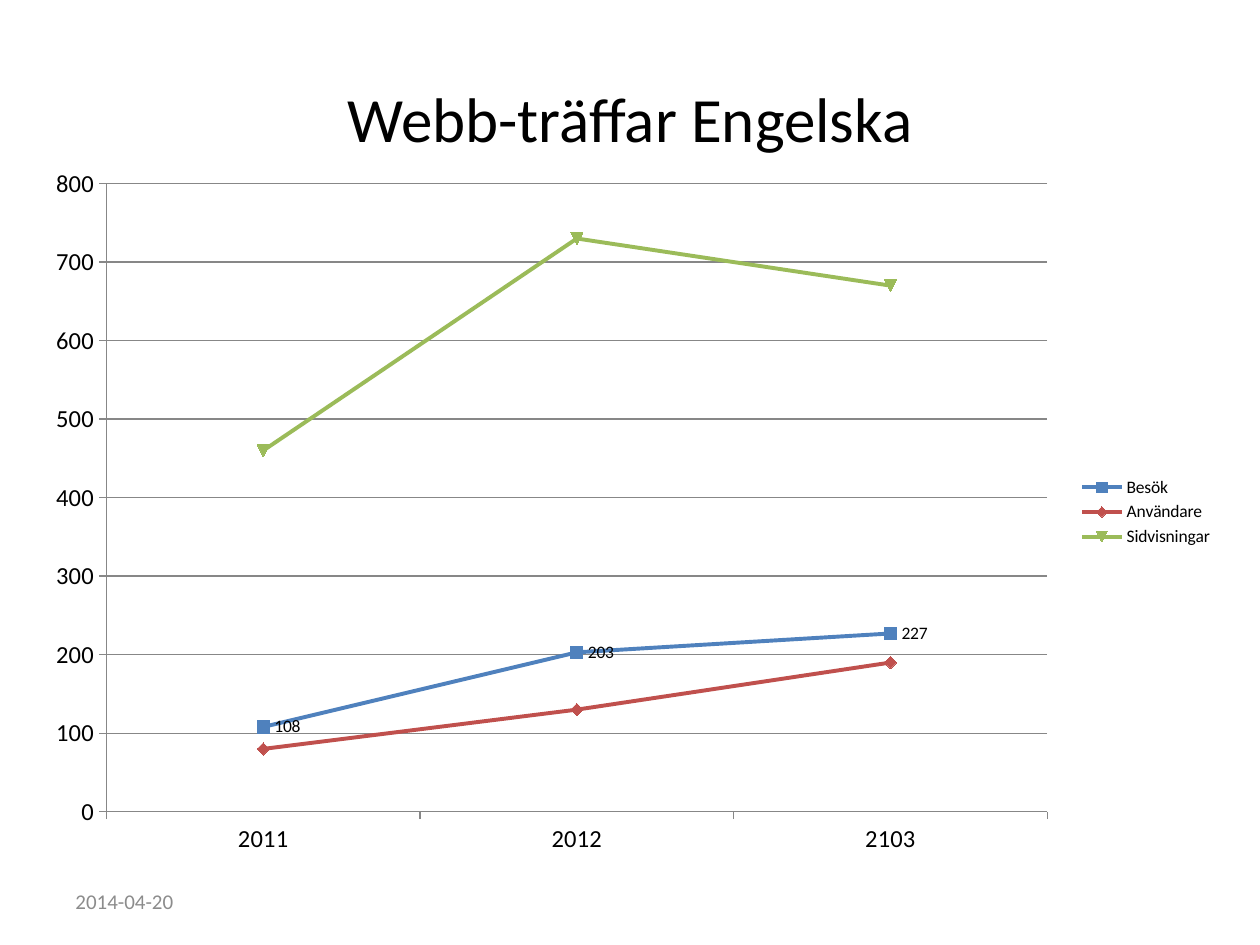
import pptx
import pptx.util
import pptx.chart.data
import pptx.dml.color
import pptx.enum.chart
import pptx.enum.text
import pptx.oxml
import pptx.oxml.ns

PX = 914400 // 126  # EMU in one px
BLACK = pptx.dml.color.RGBColor(0x00, 0x00, 0x00)
GREY = pptx.dml.color.RGBColor(0x8C, 0x8C, 0x8C)
AXIS_GREY = pptx.dml.color.RGBColor(0x87, 0x87, 0x87)
BLUE = pptx.dml.color.RGBColor(0x4F, 0x81, 0xBD)
RED = pptx.dml.color.RGBColor(0xC0, 0x50, 0x4D)
GREEN = pptx.dml.color.RGBColor(0x9B, 0xBB, 0x59)
FONT = "Calibri"

deck = pptx.Presentation()
deck.slide_width = pptx.util.Inches(10)
deck.slide_height = pptx.util.Inches(7.5)
page = deck.slides.add_slide(deck.slide_layouts[6])

# Title and date
for text, place, size, color, align in (
    ("Webb-träffar Engelska", (63, 38, 1134, 158), 36, BLACK, pptx.enum.text.PP_ALIGN.CENTER),
    ("2014-04-20", (63, 876, 294, 50), 12, GREY, pptx.enum.text.PP_ALIGN.LEFT),
):
    box = page.shapes.add_textbox(*(value * PX for value in place))
    frame = box.text_frame
    frame.word_wrap = True
    frame.vertical_anchor = pptx.enum.text.MSO_ANCHOR.MIDDLE
    frame.text = text
    para = frame.paragraphs[0]
    para.alignment = align
    span = para.runs[0]
    span.font.name = FONT
    span.font.size = pptx.util.Pt(size)
    span.font.color.rgb = color

# Line chart
series_rows = (
    ("Besök", (108, 203, 227), BLUE),
    ("Användare", (80, 130, 190), RED),
    ("Sidvisningar", (460, 730, 670), GREEN),
)
data = pptx.chart.data.CategoryChartData()
data.categories = ["2011", "2012", "2103"]
for name, values, color in series_rows:
    data.add_series(name, values)
chart = page.shapes.add_chart(
    pptx.enum.chart.XL_CHART_TYPE.LINE_MARKERS,
    35 * PX, 155 * PX, 1191 * PX, 714 * PX, data,
).chart
chart.has_title = False
chart.font.name = FONT
chart.font.size = pptx.util.Pt(10)
chart.font.color.rgb = BLACK
chart.has_legend = True
chart.legend.position = pptx.enum.chart.XL_LEGEND_POSITION.RIGHT
chart.legend.include_in_layout = False

# Series lines with automatic marker symbols
plot = chart.plots[0]
plot.vary_by_categories = False
for series, (name, values, color) in zip(plot.series, series_rows):
    series.smooth = False
    series.format.line.color.rgb = color
    series.format.line.width = pptx.util.Pt(2.25)
    series.marker.size = 7
    series.marker.format.fill.solid()
    series.marker.format.fill.fore_color.rgb = color
    series.marker.format.line.color.rgb = color

# Values beside the visits line
labels = plot.series[0].data_labels
labels.show_value = True
labels.position = pptx.enum.chart.XL_LABEL_POSITION.RIGHT
labels.font.name = FONT
labels.font.size = pptx.util.Pt(10)
labels.font.color.rgb = BLACK

# Axes and gridlines
value_axis = chart.value_axis
value_axis.minimum_scale = 0
value_axis.maximum_scale = 800
value_axis.major_unit = 100
value_axis.has_major_gridlines = True
for axis in (chart.category_axis, value_axis):
    axis.major_tick_mark = pptx.enum.chart.XL_TICK_MARK.OUTSIDE
    axis.minor_tick_mark = pptx.enum.chart.XL_TICK_MARK.NONE
    axis.tick_labels.font.name = FONT
    axis.tick_labels.font.size = pptx.util.Pt(14)
    axis.tick_labels.font.color.rgb = BLACK
for line in (chart.category_axis.format.line, value_axis.format.line,
             value_axis.major_gridlines.format.line):
    line.color.rgb = AXIS_GREY
    line.width = pptx.util.Pt(0.75)

# Plot area inside the chart frame
plot_area = chart._chartSpace.chart.plotArea
for layout in plot_area.findall(pptx.oxml.ns.qn("c:layout")):
    plot_area.remove(layout)
plot_area.insert(0, pptx.oxml.parse_xml(
    f'<c:layout {pptx.oxml.ns.nsdecls("c")}><c:manualLayout>'
    '<c:layoutTarget val="inner"/><c:xMode val="edge"/><c:yMode val="edge"/>'
    '<c:x val="0.06"/><c:y val="0.04"/><c:w val="0.79"/><c:h val="0.88"/>'
    '</c:manualLayout></c:layout>'))

deck.save("out.pptx")
